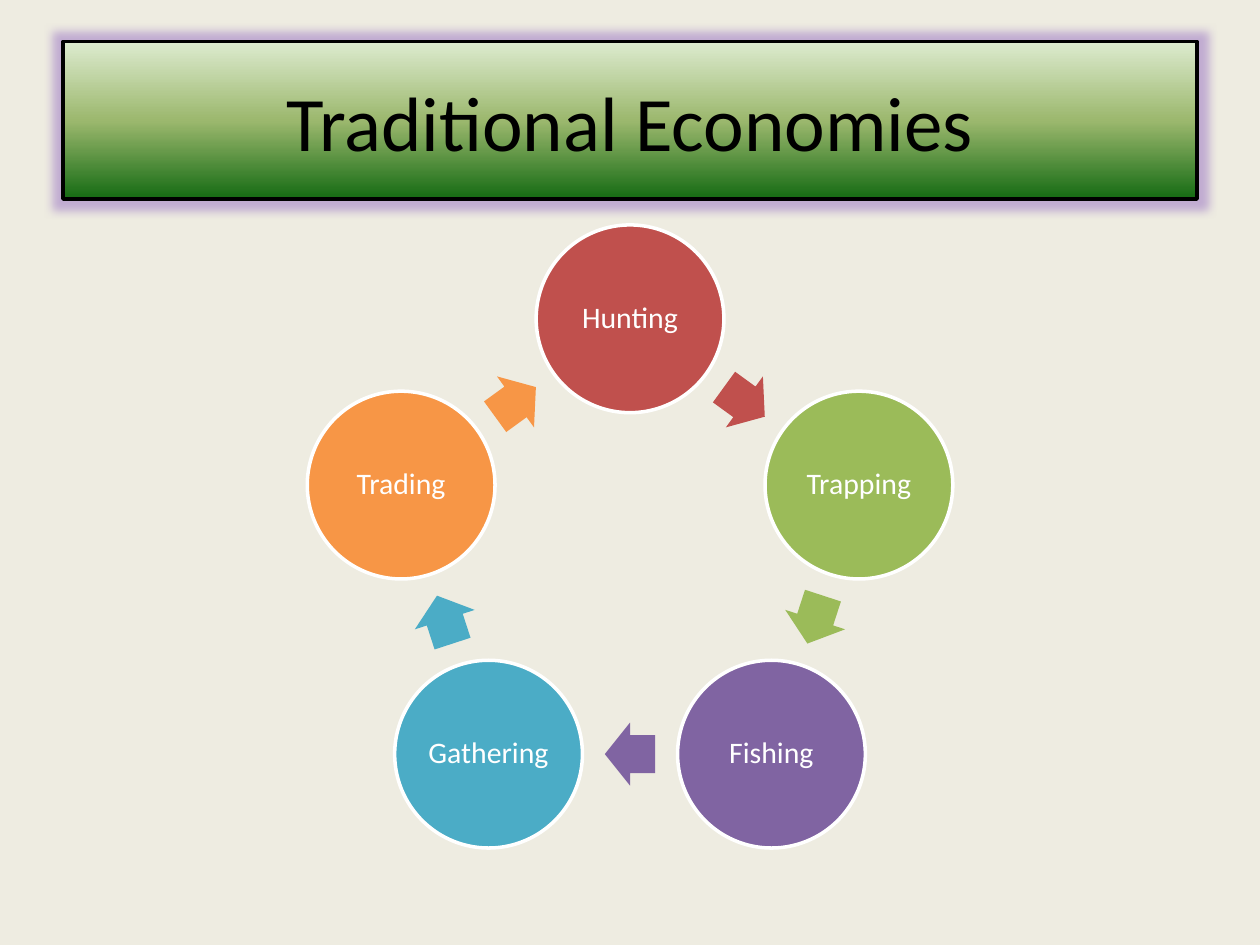
"""Build the Traditional Economies slide: a title banner above a cycle of five activities."""
from copy import deepcopy
from math import cos, pi, radians, sin

from lxml.etree import SubElement
from pptx import Presentation
from pptx.dml.color import RGBColor
from pptx.enum.shapes import MSO_SHAPE
from pptx.enum.text import MSO_ANCHOR, PP_ALIGN
from pptx.oxml.ns import qn
from pptx.util import Inches, Pt

WIDTH, HEIGHT = 10, 7.5
COLORS = {
    "background": "EEECE1", "black": "000000", "white": "FFFFFF", "glow": "7E4DBA",
    "banner top": "DDEBCF", "banner middle": "9CB86E", "banner bottom": "156B13",
    "Hunting": "C0504D", "Trapping": "9BBB59", "Fishing": "8064A2",
    "Gathering": "4BACC6", "Trading": "F79646",
}
ACTIVITIES = ["Hunting", "Trapping", "Fishing", "Gathering", "Trading"]
STEP = 360 / len(ACTIVITIES)
CENTER_X, CENTER_Y = WIDTH / 2, 4.44
RING = 1.91
ARROW_RING = RING * cos(pi / len(ACTIVITIES))
DISC = 1.49
ARROW_LENGTH, ARROW_BREADTH = 0.4, 0.5
INSET = Inches(0.02)
DISC_FRAME = {
    "margin_left": INSET, "margin_right": INSET, "margin_top": INSET,
    "margin_bottom": INSET, "vertical_anchor": MSO_ANCHOR.MIDDLE, "word_wrap": True,
}


def rgb(name):
    return RGBColor.from_string(COLORS[name])


def apply(target, values):
    for attribute, value in values.items():
        setattr(target, attribute, value)


def write(frame, text, size, color):
    frame.text = text
    paragraph = frame.paragraphs[0]
    paragraph.alignment = PP_ALIGN.CENTER
    apply(paragraph.font, {"name": "Calibri", "size": Pt(size)})
    paragraph.font.color.rgb = rgb(color)
    return paragraph


def outline(shape, color):
    shape.line.color.rgb = rgb(color)
    shape.line.width = Pt(2)


def fill_banner(banner):
    banner.fill.gradient()
    banner.fill.gradient_angle = 270
    stop_list = next(banner.element.iter(qn("a:gsLst")))
    stop_list.append(deepcopy(stop_list[0]))
    shades = ["banner top", "banner middle", "banner bottom"]
    for index, (stop, shade) in enumerate(zip(banner.fill.gradient_stops, shades)):
        stop.position = index / 2
        stop.color.rgb = rgb(shade)


def add_glow(shape, color, radius, alpha):
    effects = SubElement(shape.element.spPr, qn("a:effectLst"))
    glow = SubElement(effects, qn("a:glow"), rad=str(Pt(radius)))
    tint = SubElement(glow, qn("a:srgbClr"), val=COLORS[color])
    SubElement(tint, qn("a:alpha"), val=str(alpha * 1000))


def format_title(banner):
    apply(banner, {"left": Inches(0.5), "top": Inches(0.33),
                   "width": Inches(WIDTH - 1), "height": Inches(1.25)})
    fill_banner(banner)
    outline(banner, "black")
    add_glow(banner, "glow", radius=11, alpha=40)
    banner.text_frame.vertical_anchor = MSO_ANCHOR.MIDDLE
    write(banner.text_frame, "Traditional Economies", 44, "black")


def add_on_ring(cycle, kind, angle, ring, width, height, color):
    x = CENTER_X + ring * sin(radians(angle))
    y = CENTER_Y - ring * cos(radians(angle))
    shape = cycle.shapes.add_shape(kind, Inches(x - width / 2), Inches(y - height / 2),
                                   Inches(width), Inches(height))
    shape.shadow.inherit = False
    shape.fill.solid()
    shape.fill.fore_color.rgb = rgb(color)
    return shape


def add_disc(cycle, activity, angle):
    disc = add_on_ring(cycle, MSO_SHAPE.OVAL, angle, RING, DISC, DISC, activity)
    outline(disc, "white")
    apply(disc.text_frame, DISC_FRAME)
    write(disc.text_frame, activity, 17, "white").line_spacing = 0.9


def add_arrow(cycle, activity, angle):
    arrow = add_on_ring(cycle, MSO_SHAPE.RIGHT_ARROW, angle, ARROW_RING,
                        ARROW_LENGTH, ARROW_BREADTH, activity)
    arrow.line.fill.background()
    arrow.rotation = angle
    arrow.adjustments[0], arrow.adjustments[1] = 0.6, 0.5


def main():
    deck = Presentation()
    apply(deck, {"slide_width": Inches(WIDTH), "slide_height": Inches(HEIGHT)})
    slide = deck.slides.add_slide(deck.slide_layouts.get_by_name("Title Only"))
    slide.background.fill.solid()
    slide.background.fill.fore_color.rgb = rgb("background")
    format_title(slide.shapes.title)
    cycle = slide.shapes.add_group_shape()
    for index, activity in enumerate(ACTIVITIES):
        add_disc(cycle, activity, index * STEP)
        add_arrow(cycle, activity, (index + 0.5) * STEP)
    deck.save("out.pptx")


if __name__ == "__main__":
    main()
